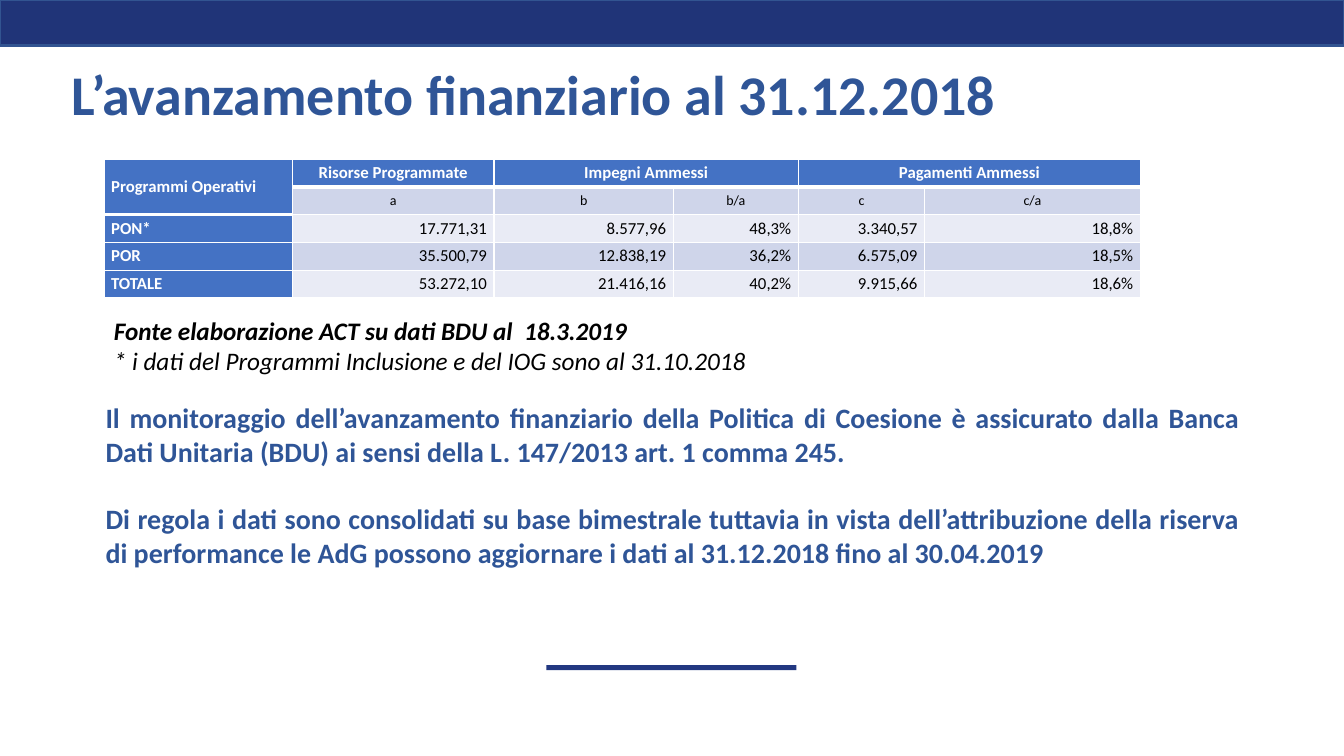
from pptx import Presentation
from pptx import util as u
from pptx.dml.color import RGBColor
from pptx.enum import shapes, text
from pptx.oxml import parse_xml
from pptx.oxml.ns import nsdecls

Cm, Pt = u.Cm, u.Pt
WHITE = RGBColor(0xFF, 0xFF, 0xFF)
BLACK = RGBColor(0, 0, 0)
NAVY = RGBColor(0x20, 0x34, 0x78)
EDGE = RGBColor(0x32, 0x54, 0x91)
RULE = RGBColor(0x22, 0x38, 0x81)
TITLE = RGBColor(0x2F, 0x55, 0x97)
HEAD = RGBColor(0x44, 0x72, 0xC4)
DARK = RGBColor(0xCF, 0xD5, 0xEA)
LIGHT = RGBColor(0xE9, 0xEB, 0xF5)
ALIGN = text.PP_ALIGN
FONT = "Calibri"

WIDTHS = [4.75, 5.08, 4.52, 3.15, 3.18, 5.44]
ROWS = [
    ["Programmi Operativi", "Risorse Programmate", "Impegni Ammessi", "",
     "Pagamenti Ammessi", ""],
    ["", "a", "b", "b/a", "c", "c/a"],
    ["PON*", "17.771,31", "8.577,96", "48,3%", "3.340,57", "18,8%"],
    ["POR", "35.500,79", "12.838,19", "36,2%", "6.575,09", "18,5%"],
    ["TOTALE", "53.272,10", "21.416,16", "40,2%", "9.915,66", "18,6%"],
]
NOTES = [
    ("Fonte elaborazione ACT su dati BDU al  18.3.2019", True),
    ("* i dati del Programmi Inclusione e del IOG sono al 31.10.2018", False),
]
BODY = [
    "Il monitoraggio dell’avanzamento finanziario della Politica di Coesione "
    "è assicurato dalla Banca Dati Unitaria (BDU) ai sensi della "
    "L. 147/2013 art. 1 comma 245.",
    "Di regola i dati sono consolidati su base bimestrale tuttavia in vista "
    "dell’attribuzione della riserva di performance le AdG possono "
    "aggiornare i dati al 31.12.2018 fino al 30.04.2019",
]


def add_run(para, words, size, color, bold=False, slant=False):
    """Add one formatted run to a paragraph."""
    run = para.add_run()
    run.text = words
    font = run.font
    font.name, font.size, font.bold, font.italic = FONT, Pt(size), bold, slant
    font.color.rgb = color


def add_bar(slide, box, fill, edge=None):
    """Draw a flat bar in the box, with an outline if one is given."""
    bar = slide.shapes.add_shape(shapes.MSO_SHAPE.RECTANGLE, *map(Cm, box))
    bar.shadow.inherit = False
    bar.fill.solid()
    bar.fill.fore_color.rgb = fill
    if edge is None:
        bar.line.fill.background()
    else:
        bar.line.color.rgb = edge
        bar.line.width = Pt(2)


def add_title(slide, box, words):
    """Place the title placeholder in the box."""
    title = slide.shapes.title
    title.left, title.top, title.width, title.height = map(Cm, box)
    para = title.text_frame.paragraphs[0]
    para.alignment = ALIGN.JUSTIFY
    add_run(para, words, 40, TITLE, True)


def add_frame(slide, box):
    """Add a wrapping text box and return its text frame."""
    frame = slide.shapes.add_textbox(*map(Cm, box)).text_frame
    frame.word_wrap = True
    return frame


def next_para(frame, index):
    """Return the first paragraph, or a new one after it."""
    return frame.add_paragraph() if index else frame.paragraphs[0]


def add_notes(slide, box):
    """Write the source lines under the table."""
    frame = add_frame(slide, box)
    for i, (words, bold) in enumerate(NOTES):
        add_run(next_para(frame, i), words, 18, BLACK, bold, True)


def add_body(slide, box):
    """Write the justified paragraphs."""
    frame = add_frame(slide, box)
    for i, words in enumerate(BODY):
        para = next_para(frame, i)
        para.alignment = ALIGN.JUSTIFY
        if i:
            para.space_before = Pt(24)
        add_run(para, words, 20, TITLE, True)


def set_edges(cell, base):
    """Give a cell white borders, with its own bottom width."""
    props = cell._tc.get_or_add_tcPr()
    for side, width in zip("LRTB", (1, 1, 1, base)):
        props.append(parse_xml(
            f'<a:ln{side} {nsdecls("a")} w="{Pt(width)}"><a:solidFill>'
            f'<a:srgbClr val="{WHITE}"/></a:solidFill></a:ln{side}>'))


def style_cell(cell, row, col, words):
    """Format one cell by its place in the table."""
    head = row == 0 or col == 0
    set_edges(cell, 3 if row == 0 or (row, col) == (1, 0) else 1)
    cell.fill.solid()
    cell.fill.fore_color.rgb = HEAD if head else DARK if row % 2 else LIGHT
    cell.margin_left = cell.margin_right = Cm(0.18)
    cell.margin_top = cell.margin_bottom = 0
    cell.vertical_anchor = text.MSO_ANCHOR.MIDDLE
    if cell.is_spanned:
        return
    para = cell.text_frame.paragraphs[0]
    para.alignment = (ALIGN.LEFT if col == 0 else
                      ALIGN.CENTER if row < 2 else ALIGN.RIGHT)
    add_run(para, words, 10 if row == 1 else 12,
            WHITE if head else BLACK, head)


def add_data(slide, left, top, high):
    """Build the table of funds, commitments and payments."""
    box = (left, top, sum(WIDTHS), high * len(ROWS))
    table = slide.shapes.add_table(
        len(ROWS), len(WIDTHS), *map(Cm, box)).table
    for col, width in zip(table.columns, WIDTHS):
        col.width = Cm(width)
    for start, end in [((0, 0), (1, 0)), ((0, 2), (0, 3)), ((0, 4), (0, 5))]:
        table.cell(*start).merge(table.cell(*end))
    for r, line in enumerate(ROWS):
        table.rows[r].height = Cm(high)
        for c, words in enumerate(line):
            style_cell(table.cell(r, c), r, c, words)


def main():
    """Build and save the slide."""
    deck = Presentation()
    deck.slide_width, deck.slide_height = Cm(33.87), Cm(19.05)
    slide = deck.slides.add_slide(deck.slide_layouts[5])
    add_bar(slide, (0, 0, 33.87, 1.14), NAVY, EDGE)
    add_bar(slide, (13.77, 16.76, 6.3, 0.13), RULE)
    add_title(slide, (1.55, 1.37, 30.12, 1.96),
              "L’avanzamento finanziario al 31.12.2018")
    add_body(slide, (2.41, 9.98, 29.08, 5.38))
    add_data(slide, 2.62, 4.01, 0.7)
    add_notes(slide, (2.62, 7.82, 16.94, 1.8))
    deck.save("out.pptx")


if __name__ == "__main__":
    main()
